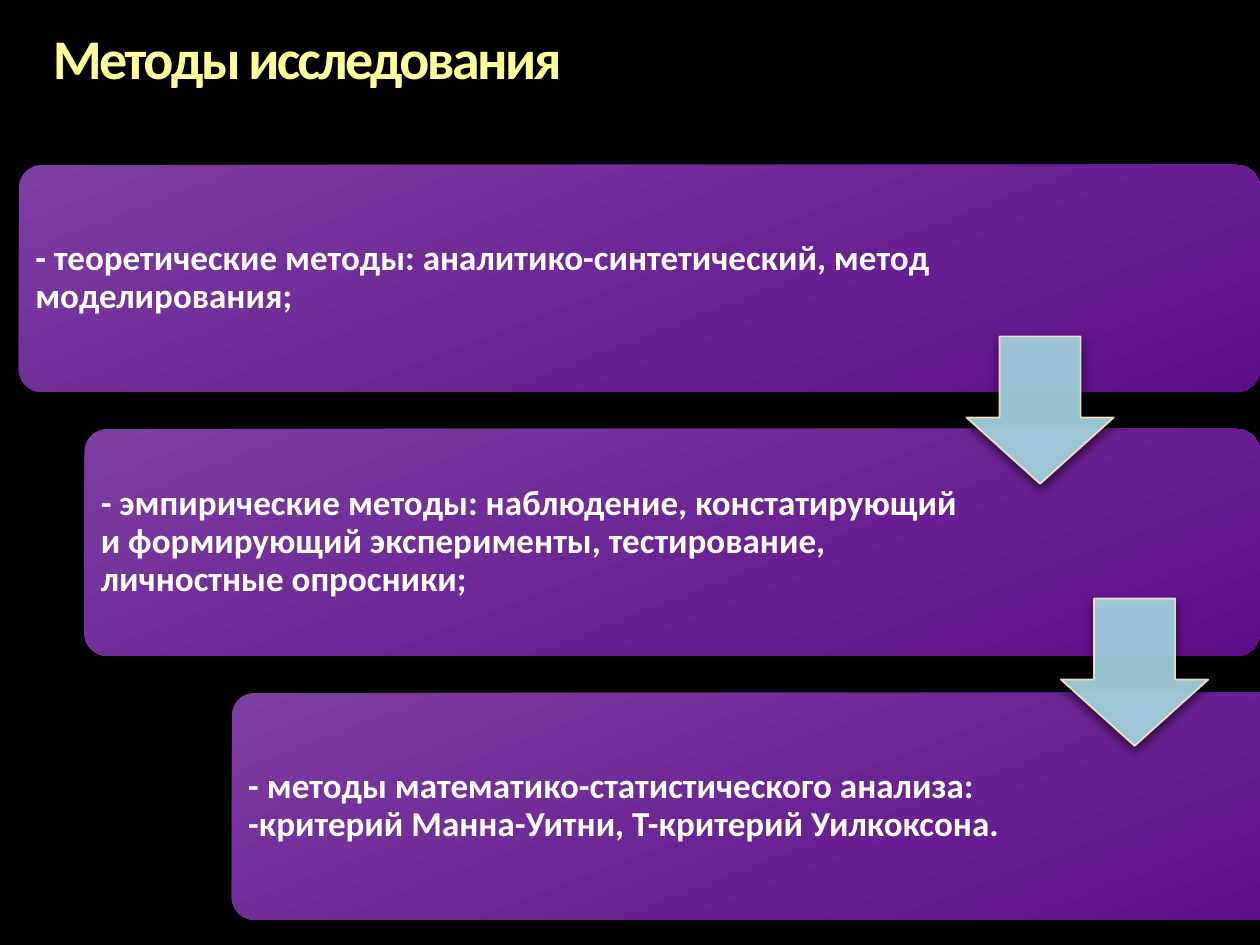
from lxml.etree import SubElement
from pptx import Presentation
from pptx.dml.color import RGBColor
from pptx.enum.shapes import MSO_SHAPE as Shape
from pptx.enum.text import MSO_ANCHOR as Anchor, MSO_AUTO_SIZE as AutoSize, PP_ALIGN as Align
from pptx.oxml.ns import qn
from pptx.util import Inches, Pt

TITLE = "Методы исследования"
# left edge, box width, label width, wording
METHODS = [
    (0.15, 9.85, 7.62,
     "- теоретические методы: аналитико-синтетический, метод моделирования;"),
    (0.67, 9.33, 7.12,
     "- эмпирические методы: наблюдение, констатирующий и формирующий "
     "эксперименты, тестирование, личностные опросники;"),
    (1.84, 8.5, 6.48,
     "- методы математико-статистического анализа:\v"
     "-критерий Манна-Уитни, Т-критерий Уилкоксона."),
]
TOP, PITCH, BOX_HEIGHT, LABEL_INSET = 1.31, 2.095, 1.8, 0.05
ARROW_LEFT, ARROW_TOP, ARROW_SIZE = 7.67, 2.67, 1.17
ARROW_STEP_X, ARROW_STEP_Y = 0.75, 2.08


def rgb(value):
    return RGBColor.from_string(value)


def inches(*lengths):
    return [Inches(length) for length in lengths]


def set_text(shape, text, size, color, anchor, margin):
    frame = shape.text_frame
    frame.text = text
    frame_format = dict(word_wrap=True, auto_size=AutoSize.NONE, vertical_anchor=anchor)
    for side in ("left", "right", "top", "bottom"):
        frame_format["margin_" + side] = Inches(margin)
    for name, value in frame_format.items():
        setattr(frame, name, value)
    paragraph = frame.paragraphs[0]
    paragraph.alignment = Align.LEFT
    paragraph.line_spacing = 0.9
    for run in paragraph.runs:
        for name, value in dict(name="Calibri", size=Pt(size), bold=True).items():
            setattr(run.font, name, value)
        run.font.color.rgb = rgb(color)
    return paragraph


def set_opacity(fill_parent, percent):
    color = fill_parent.find(qn("a:solidFill"))[0]
    SubElement(color, qn("a:alpha"), val=str(percent * 1000))


def add_shadow(shape, blur, distance, opacity):
    """Drop a black shadow straight below the shape."""
    shape.shadow.inherit = False
    effects = shape._element.spPr.find(qn("a:effectLst"))
    shadow = SubElement(effects, qn("a:outerShdw"), blurRad=str(Pt(blur)),
                        dist=str(Pt(distance)), dir="5400000", rotWithShape="0")
    color = SubElement(shadow, qn("a:srgbClr"), val="000000")
    SubElement(color, qn("a:alpha"), val=str(opacity * 1000))


def add_title(slide):
    title = slide.shapes.title
    title.left, title.top, title.width, title.height = inches(0.42, 0.25, 9.17, 0.97)
    paragraph = set_text(title, TITLE, 32, "FFFF99", Anchor.TOP, 0)
    paragraph.runs[0].font._element.set("spc", "-150")


def add_method(slide, left, top, width, label_width, text):
    box = slide.shapes.add_shape(Shape.ROUNDED_RECTANGLE,
                                 *inches(left, top, width, BOX_HEIGHT))
    box.adjustments[0] = 0.1
    box.fill.gradient()
    box.fill.gradient_angle = 291
    for stop, color in zip(box.fill.gradient_stops, ("7D3DA1", "5D0E89")):
        stop.color.rgb = rgb(color)
    box.line.fill.background()
    add_shadow(box, 9, 9, 70)
    label = slide.shapes.add_textbox(*inches(
        left + LABEL_INSET, top + LABEL_INSET, label_width, BOX_HEIGHT - 2 * LABEL_INSET))
    set_text(label, text, 20, "FFFFFF", Anchor.MIDDLE, 0.08)


def add_arrow(slide, left, top):
    arrow = slide.shapes.add_shape(Shape.DOWN_ARROW,
                                   *inches(left, top, ARROW_SIZE, ARROW_SIZE))
    arrow.adjustments[0], arrow.adjustments[1] = 0.55, 0.45
    arrow.fill.solid()
    arrow.fill.fore_color.rgb = rgb("A8D9E5")
    arrow.line.color.rgb = rgb("FFE8CC")
    arrow.line.width = Pt(1)
    properties = arrow._element.spPr
    for fill_parent in (properties, properties.find(qn("a:ln"))):
        set_opacity(fill_parent, 90)
    add_shadow(arrow, 6, 3, 60)


def main():
    presentation = Presentation()
    presentation.slide_width, presentation.slide_height = inches(10, 7.5)
    slide = presentation.slides.add_slide(presentation.slide_layouts[5])
    slide.background.fill.solid()
    slide.background.fill.fore_color.rgb = rgb("000000")
    add_title(slide)
    for row, (left, width, label_width, text) in enumerate(METHODS):
        add_method(slide, left, TOP + row * PITCH, width, label_width, text)
    for step in range(len(METHODS) - 1):
        add_arrow(slide, ARROW_LEFT + step * ARROW_STEP_X, ARROW_TOP + step * ARROW_STEP_Y)
    presentation.save("out.pptx")


if __name__ == "__main__":
    main()
